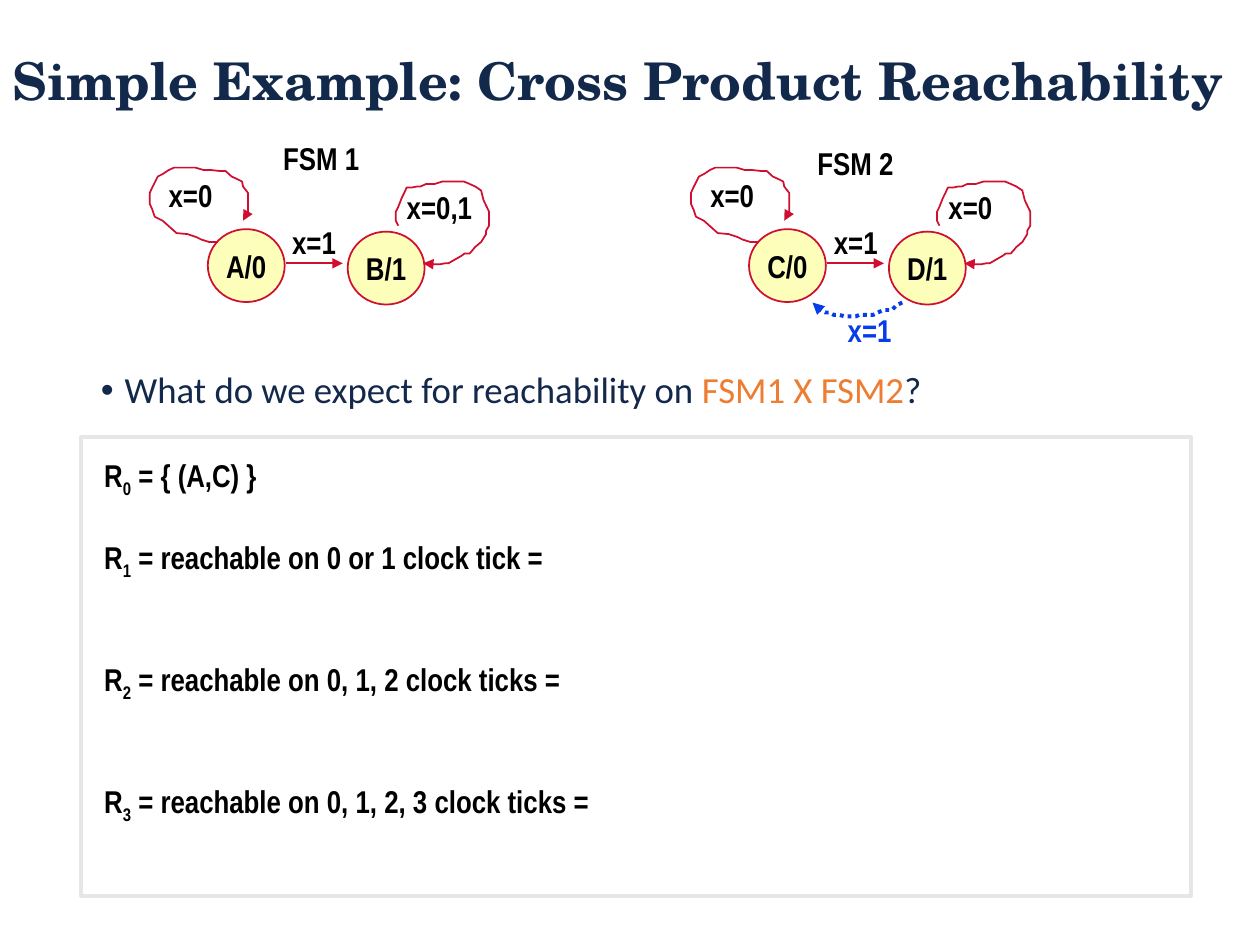
"""Build the slide on cross product reachability of two state machines."""
from lxml.etree import SubElement
from pptx import Presentation
from pptx.dml.color import RGBColor
from pptx.enum.dml import MSO_LINE
from pptx.enum.shapes import MSO_CONNECTOR, MSO_SHAPE
from pptx.enum.text import MSO_ANCHOR, MSO_AUTO_SIZE, PP_ALIGN
from pptx.oxml.ns import qn
from pptx.util import Cm, Pt

NAVY = RGBColor(0x13, 0x29, 0x4B)
ORANGE = RGBColor(0xED, 0x7D, 0x31)
BLACK = RGBColor(0, 0, 0)
WHITE = RGBColor(0xFF, 0xFF, 0xFF)
GRAY = RGBColor(0xE7, 0xE6, 0xE6)
YELLOW = RGBColor(0xFC, 0xFE, 0xB9)
RED = RGBColor(0xCF, 0x0E, 0x30)
BLUE = RGBColor(0x06, 0x3D, 0xE8)
FONT = "Arial Narrow"
FSM_GAP = 10.91

LEFT_LOOP = [
    (4.39, 4.88), (4.22, 4.88), (4.06, 4.83), (3.96, 4.78), (3.78, 4.72), (3.56, 4.7),
    (3.28, 4.45), (3.12, 4.37), (3.07, 4.22), (3.02, 4.11), (3.02, 4.04), (3.02, 3.89),
    (3.07, 3.78), (3.18, 3.56), (3.28, 3.51), (3.4, 3.43), (3.51, 3.38), (3.61, 3.38),
    (3.68, 3.38), (3.78, 3.38), (3.94, 3.38), (4.11, 3.43), (4.27, 3.43), (4.45, 3.45),
    (4.55, 3.45), (4.67, 3.56), (4.78, 3.61), (4.88, 3.66), (4.9, 3.76), (5, 3.89),
    (5, 3.99), (5, 4.06), (5, 4.17), (5, 4.27), (4.95, 4.37), (4.9, 4.45),
]
RIGHT_LOOP = [
    (8.03, 4.55), (7.98, 4.45), (7.98, 4.37), (7.98, 4.27), (8.03, 4.17), (8.1, 3.99),
    (8.15, 3.89), (8.2, 3.78), (8.31, 3.78), (8.41, 3.76), (8.48, 3.76), (8.59, 3.71),
    (8.69, 3.71), (8.76, 3.71), (8.92, 3.66), (9.04, 3.66), (9.25, 3.66), (9.35, 3.66),
    (9.47, 3.71), (9.58, 3.76), (9.7, 3.84), (9.75, 4.04), (9.86, 4.27), (9.86, 4.39),
    (9.86, 4.55), (9.8, 4.65), (9.8, 4.72), (9.7, 4.88), (9.58, 4.98), (9.47, 5.11),
    (9.37, 5.11), (9.3, 5.16), (9.04, 5.31), (8.97, 5.31), (8.86, 5.33), (8.76, 5.33),
    (8.64, 5.31), (8.53, 5.31),
]
BACK_ARC = [
    (18.19, 6.1), (18.08, 6.15), (17.98, 6.25), (17.91, 6.25), (17.81, 6.25), (17.7, 6.3),
    (17.6, 6.35), (17.48, 6.35), (17.32, 6.35), (17.25, 6.38), (17.15, 6.38), (17.04, 6.38),
    (16.92, 6.35), (16.81, 6.35), (16.71, 6.3), (16.64, 6.3), (16.54, 6.25), (16.43, 6.2),
    (16.38, 6.1),
]


def format_arrow(sp, color, width, dash=None):
    sp.line.color.rgb = color
    sp.line.width = Pt(width)
    if dash:
        sp.line.dash_style = dash
    sp_pr = sp.element.spPr
    SubElement(sp_pr.find(qn("a:ln")), qn("a:tailEnd"), type="triangle")
    SubElement(sp_pr, qn("a:effectLst"))


def format_text(p, size=18, font=FONT, color=BLACK, bold=True):
    for r in p.runs:
        r.font.size = Pt(size)
        r.font.name = font
        r.font.color.rgb = color
        r.font.bold = bold


prs = Presentation()
prs.slide_width, prs.slide_height = Cm(25.4), Cm(19.05)
s = prs.slides.add_slide(prs.slide_layouts[1])

title, body = s.placeholders
title.left, title.top, title.width, title.height = Cm(0), Cm(0.64), Cm(25.4), Cm(2.1)
tf = title.text_frame
tf.text = "Simple Example: Cross Product Reachability"
tf.auto_size = MSO_AUTO_SIZE.NONE
tf.vertical_anchor = MSO_ANCHOR.MIDDLE
p = tf.paragraphs[0]
p.alignment = PP_ALIGN.LEFT
p.line_spacing = 0.9
format_text(p, 29.7, "TeX Gyre Schola", NAVY)

body.left, body.top, body.width, body.height = Cm(1.78), Cm(7.37), Cm(21.95), Cm(10.21)
tf = body.text_frame
tf.auto_size = MSO_AUTO_SIZE.NONE
p = tf.paragraphs[0]
pPr = p._p.get_or_add_pPr()
pPr.set("marL", str(Cm(0.48)))
pPr.set("indent", str(-Cm(0.48)))
SubElement(pPr, qn("a:buFont"), typeface="Arial")
SubElement(pPr, qn("a:buChar"), char="•")
p.line_spacing = 0.9
p.space_before = Pt(0)
for text in ("What do we expect for reachability on ", "FSM1 X FSM2", "?"):
    p.add_run().text = text
format_text(p, 21, "Calibri", NAVY, False)
p.runs[1].font.color.rgb = ORANGE

frame = s.shapes.add_shape(MSO_SHAPE.RECTANGLE, Cm(1.63), Cm(8.81), Cm(22.38), Cm(9.25))
frame.shadow.inherit = False
frame.fill.solid()
frame.fill.fore_color.rgb = WHITE
frame.line.color.rgb = GRAY
frame.line.width = Pt(2)

tf = s.shapes.add_textbox(Cm(1.85), Cm(9.07), Cm(10.52), Cm(7.16)).text_frame
tf.word_wrap = False
steps = [
    (" = { (A,C) }", 0),
    (" = reachable on 0 or 1 clock tick =", 22.5),
    (" = reachable on 0, 1, 2 clock ticks =", 45),
    (" = reachable on 0, 1, 2, 3 clock ticks =", 45),
]
for i, (text, gap) in enumerate(steps):
    p = tf.add_paragraph() if i else tf.paragraphs[0]
    p.space_before = Pt(gap)
    for part in ("R", str(i), text):
        p.add_run().text = part
    format_text(p)
    p.runs[1].font._element.set("baseline", "-25000")

for dx, names in ((0, ("A/0", "B/1")), (FSM_GAP, ("C/0", "D/1"))):
    for name, x, y in zip(names, (4.19, 7.01), (4.62, 4.67)):
        sp = s.shapes.add_shape(MSO_SHAPE.OVAL, Cm(x + dx), Cm(y), Cm(1.55), Cm(1.47))
        sp.shadow.inherit = False
        sp.fill.solid()
        sp.fill.fore_color.rgb = YELLOW
        sp.line.color.rgb = RED
        sp.line.width = Pt(1)
        tf = sp.text_frame
        tf.text = name
        tf.word_wrap = False
        tf.vertical_anchor = MSO_ANCHOR.MIDDLE
        tf.paragraphs[0].alignment = PP_ALIGN.CENTER
        format_text(tf.paragraphs[0])
    arrow = s.shapes.add_connector(
        MSO_CONNECTOR.STRAIGHT, Cm(5.77 + dx), Cm(5.31), Cm(6.91 + dx), Cm(5.31))
    format_arrow(arrow, RED, 1)

curves = [(loop, dx, RED, 1, None) for dx in (0, FSM_GAP) for loop in (LEFT_LOOP, RIGHT_LOOP)]
curves.append((BACK_ARC, 0, BLUE, 2.25, MSO_LINE.ROUND_DOT))
for points, dx, color, width, dash in curves:
    start, *rest = [(Cm(x + dx), Cm(y)) for x, y in points]
    builder = s.shapes.build_freeform(*start)
    builder.add_line_segments(rest, close=False)
    sp = builder.convert_to_shape()
    sp.fill.background()
    format_arrow(sp, color, width, dash)

labels = [
    ("FSM 1", 5.46, 2.67, 2.06, BLACK),
    ("x=0", 3.15, 3.43, 1.4, BLACK),
    ("x=1", 5.64, 4.37, 1.4, BLACK),
    ("x=0,1", 7.95, 3.66, 1.83, BLACK),
    ("FSM 2", 16.23, 2.77, 2.06, BLACK),
    ("x=0", 14.07, 3.43, 1.4, BLACK),
    ("x=1", 16.56, 4.37, 1.4, BLACK),
    ("x=0", 18.87, 3.66, 1.4, BLACK),
    ("x=1", 16.84, 6.15, 1.4, BLUE),
]
for text, x, y, w, color in labels:
    tf = s.shapes.add_textbox(Cm(x), Cm(y), Cm(w), Cm(1.02)).text_frame
    tf.text = text
    tf.word_wrap = False
    tf.auto_size = MSO_AUTO_SIZE.SHAPE_TO_FIT_TEXT
    format_text(tf.paragraphs[0], color=color)

prs.save("out.pptx")
